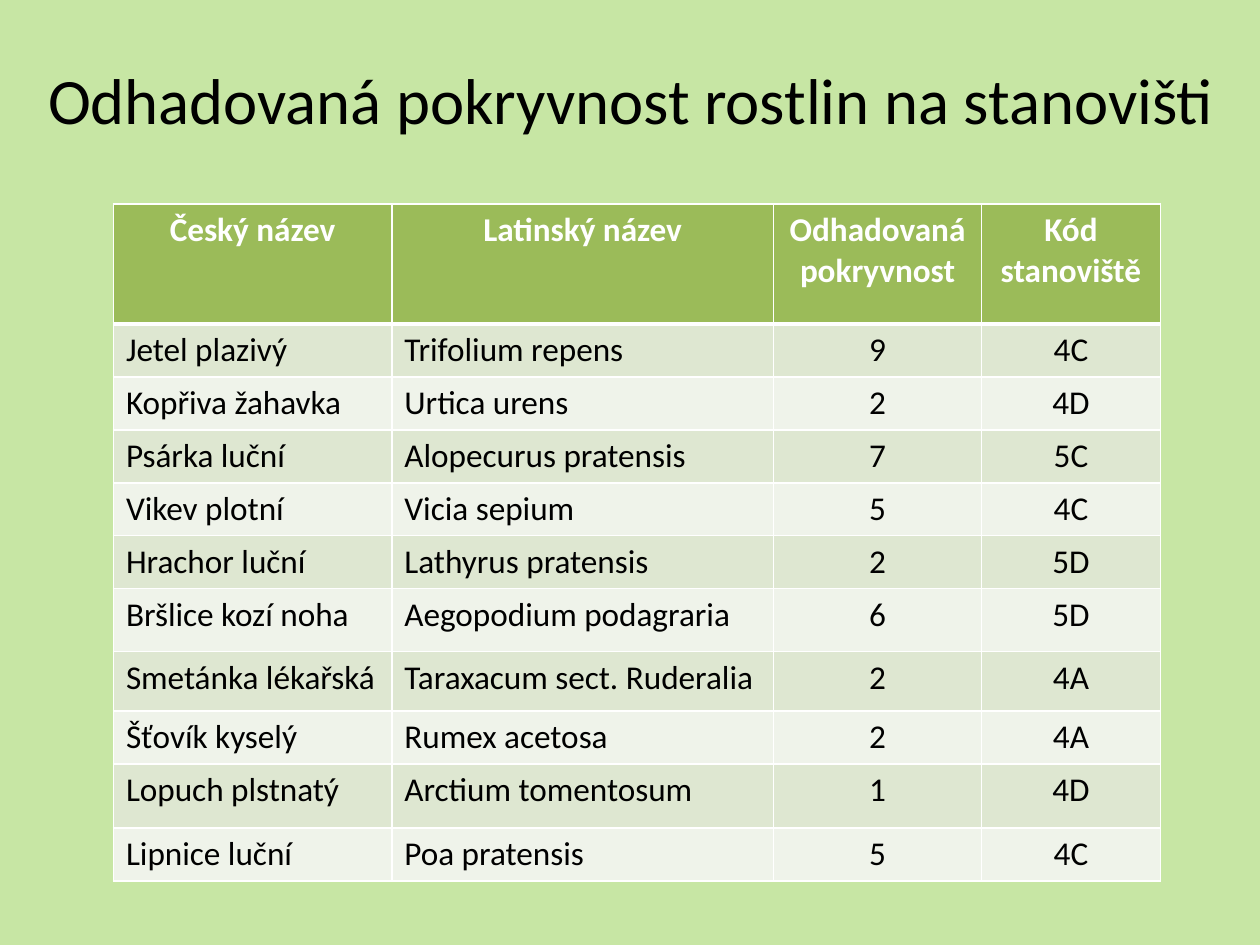
from lxml import etree
from pptx import Presentation
from pptx.dml.color import RGBColor
from pptx.enum.text import MSO_ANCHOR, MSO_AUTO_SIZE, PP_ALIGN
from pptx.oxml.ns import qn
from pptx.util import Inches, Pt

BACKGROUND = RGBColor(0xC7, 0xE6, 0xA4)
HEADER_GREEN = RGBColor(0x9B, 0xBB, 0x59)
BAND_DARK = RGBColor(0xDE, 0xE7, 0xD1)
BAND_LIGHT = RGBColor(0xEF, 0xF3, 0xEA)
BLACK = RGBColor(0, 0, 0)
WHITE = RGBColor(0xFF, 0xFF, 0xFF)

ROWS = [
    ("Český název", "Latinský název", "Odhadovaná pokryvnost", "Kód stanoviště"),
    ("Jetel plazivý", "Trifolium repens", "9", "4C"),
    ("Kopřiva žahavka", "Urtica urens", "2", "4D"),
    ("Psárka luční", "Alopecurus pratensis", "7", "5C"),
    ("Vikev plotní", "Vicia sepium", "5", "4C"),
    ("Hrachor luční", "Lathyrus pratensis", "2", "5D"),
    ("Bršlice kozí noha", "Aegopodium podagraria", "6", "5D"),
    ("Smetánka lékařská", "Taraxacum sect. Ruderalia", "2", "4A"),
    ("Šťovík kyselý", "Rumex acetosa", "2", "4A"),
    ("Lopuch plstnatý", "Arctium tomentosum", "1", "4D"),
    ("Lipnice luční", "Poa pratensis", "5", "4C"),
]
COLUMN_WIDTHS = [2.21, 3.03, 1.65, 1.42]
ROW_HEIGHT = 0.4
TALL_ROWS = {0: 0.95, 6: 0.5, 7: 0.47, 9: 0.51}


def set_font(para, size, color, bold=False):
    para.font.name = "Calibri"
    para.font.size = Pt(size)
    para.font.color.rgb = color
    para.font.bold = bold


def add_borders(cell, widths):
    """Draw white cell borders; widths maps L, R, T, B to points."""
    properties = cell._tc.get_or_add_tcPr()
    for index, (side, width) in enumerate(widths.items()):
        line = etree.Element(qn(f"a:ln{side}"), w=str(Pt(width)))
        fill = etree.SubElement(line, qn("a:solidFill"))
        etree.SubElement(fill, qn("a:srgbClr"), val=str(WHITE))
        properties.insert(index, line)


deck = Presentation()
deck.slide_width, deck.slide_height = Inches(10), Inches(7.5)
page = deck.slides.add_slide(deck.slide_layouts[5])
page.background.fill.solid()
page.background.fill.fore_color.rgb = BACKGROUND

# Title
title = page.shapes.title
title.left, title.top = Inches(0.16), Inches(0.16)
title.width, title.height = Inches(9.69), Inches(1.25)
title.text_frame.text = "Odhadovaná pokryvnost rostlin na stanovišti"
title.text_frame.auto_size = MSO_AUTO_SIZE.NONE
title.text_frame.vertical_anchor = MSO_ANCHOR.MIDDLE
title_para = title.text_frame.paragraphs[0]
title_para.alignment = PP_ALIGN.CENTER
set_font(title_para, 37, BLACK)

# Table grid
table = page.shapes.add_table(
    len(ROWS), len(COLUMN_WIDTHS),
    Inches(0.9), Inches(1.62), Inches(8.32), Inches(5.36)).table
for column, width in zip(table.columns, COLUMN_WIDTHS):
    column.width = Inches(width)
for index, row in enumerate(table.rows):
    row.height = Inches(TALL_ROWS.get(index, ROW_HEIGHT))

# Table cells: green header, then alternating bands
for r, texts in enumerate(ROWS):
    is_header = r == 0
    band = HEADER_GREEN if is_header else BAND_DARK if r % 2 else BAND_LIGHT
    borders = {"L": 1, "R": 1, "T": 3 if r == 1 else 1, "B": 3 if is_header else 1}
    for c, text in enumerate(texts):
        cell = table.cell(r, c)
        cell.text = text
        cell.fill.solid()
        cell.fill.fore_color.rgb = band
        add_borders(cell, borders)
        para = cell.text_frame.paragraphs[0]
        para.alignment = PP_ALIGN.CENTER if is_header or c >= 2 else PP_ALIGN.LEFT
        set_font(para, 19, WHITE if is_header else BLACK, is_header)

deck.save("out.pptx")
